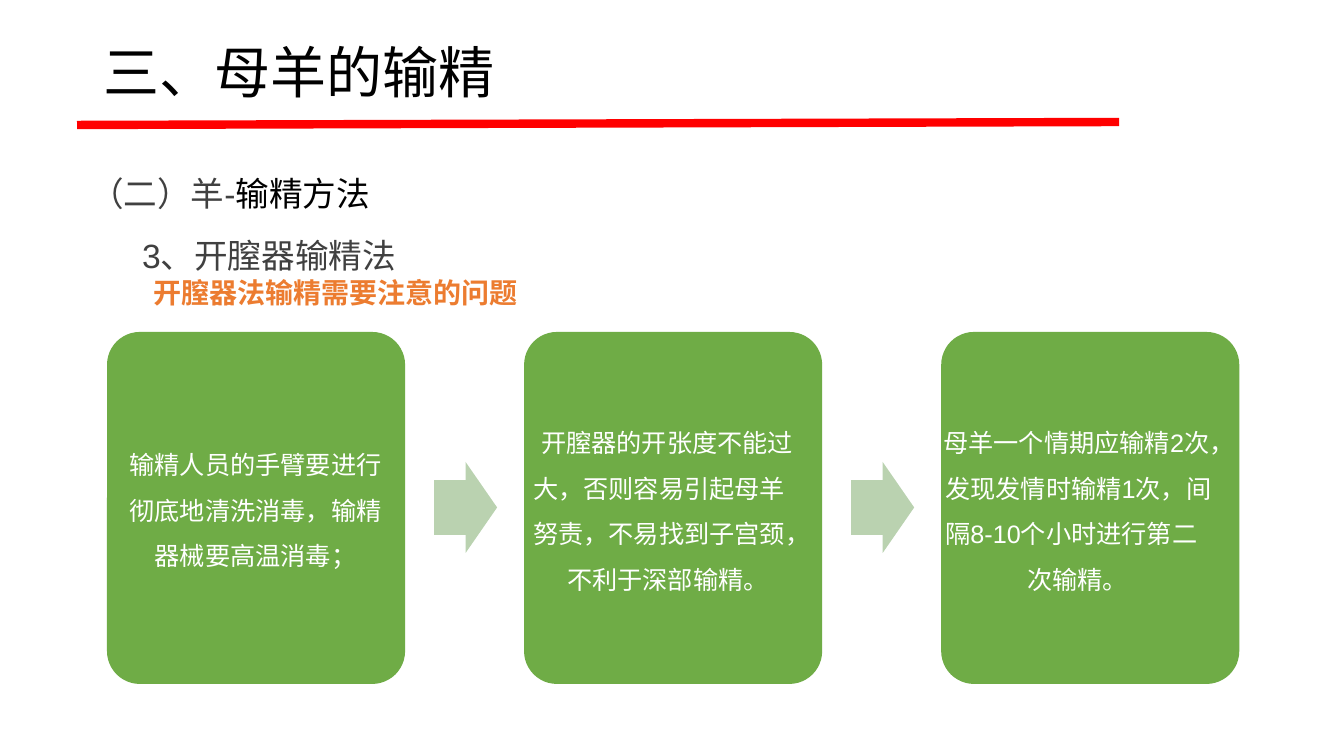
import itertools

import pptx
import pptx.dml.color
import pptx.enum.shapes
import pptx.enum.text
import pptx.oxml.ns
import pptx.util
from lxml import etree

RGBColor = pptx.dml.color.RGBColor
SHAPE = pptx.enum.shapes.MSO_SHAPE
ALIGN = pptx.enum.text.PP_ALIGN
ANCHOR = pptx.enum.text.MSO_ANCHOR

BLACK = RGBColor(0x00, 0x00, 0x00)
GREY = RGBColor(0x40, 0x40, 0x40)
WHITE = RGBColor(0xFF, 0xFF, 0xFF)
RED = RGBColor(0xFF, 0x00, 0x00)
ORANGE = RGBColor(0xEC, 0x7C, 0x30)
GREEN = RGBColor(0x6F, 0xAC, 0x46)
PALE_GREEN = RGBColor(0xBA, 0xD2, 0xB0)

CHINESE_FONT = "Noto Sans CJK SC"
LATIN_FONT = "Arial"

CARD_LEFT, CARD_TOP, CARD_WIDTH, CARD_HEIGHT = 107, 332, 298, 352
CARD_STEP = 417
ARROW_OFFSET, ARROW_TOP, ARROW_WIDTH, ARROW_HEIGHT = 327, 462, 63, 91


def px(count):
    return pptx.util.Emu(count * 9071)


def add_text(paragraph, text, size, color, bold=False, align=None, line=None,
             before=0, margin=0, indent=0):
    """Append text to a paragraph; a newline in it becomes a line break."""
    props = paragraph._p.get_or_add_pPr()
    props.set("marL", str(px(margin)))
    props.set("indent", str(px(indent)))
    paragraph.alignment = align
    paragraph.line_spacing = line
    paragraph.space_before = pptx.util.Pt(before)
    for number, row in enumerate(text.split("\n")):
        if number:
            paragraph.add_line_break()
        for latin, letters in itertools.groupby(row, key=str.isascii):
            run = paragraph.add_run()
            run.text = "".join(letters)
            run.font.name = LATIN_FONT if latin else CHINESE_FONT
            run.font.size = pptx.util.Pt(size)
            run.font.bold = bold
            run.font.color.rgb = color
            east_asian = etree.SubElement(run._r.rPr, pptx.oxml.ns.qn("a:ea"))
            east_asian.set("typeface", CHINESE_FONT)


def add_box(slide, left, top, width, height):
    frame = slide.shapes.add_textbox(px(left), px(top), px(width), px(height)).text_frame
    frame.word_wrap = True
    frame.margin_left = frame.margin_right = frame.margin_bottom = 0
    frame.margin_top = px(2)
    return frame


def add_block(slide, kind, left, top, width, height, color, *adjustments):
    block = slide.shapes.add_shape(kind, px(left), px(top), px(width), px(height))
    block.shadow.inherit = False
    block.fill.solid()
    block.fill.fore_color.rgb = color
    block.line.fill.background()
    for number, value in enumerate(adjustments):
        block.adjustments[number] = value


def add_rule(slide, x1, y1, x2, y2):
    rule = slide.shapes.add_connector(
        pptx.enum.shapes.MSO_CONNECTOR.STRAIGHT, px(x1), px(y1), px(x2), px(y2))
    rule.line.color.rgb = RED
    rule.line.width = pptx.util.Pt(6)
    etree.SubElement(rule._element.spPr, pptx.oxml.ns.qn("a:effectLst"))


def add_title(slide, text):
    title = slide.shapes.title
    title.left, title.top, title.width, title.height = px(93), px(2), px(1159), px(146)
    title.text_frame.vertical_anchor = ANCHOR.MIDDLE
    add_text(title.text_frame.paragraphs[0], text, 40, BLACK, align=ALIGN.LEFT, line=0.9)


def add_headings(slide):
    headings = add_box(slide, 74, 151, 1050, 126)
    method = headings.paragraphs[0]
    add_text(method, "（二）羊-", 24, GREY, line=1.5, margin=16)
    add_text(method, "输精方法", 24, BLACK, line=1.5, margin=16)
    add_text(headings.add_paragraph(), "3、开膣器输精法", 24, GREY,
             line=1.5, before=1, margin=68)
    topic = add_box(slide, 152, 274, 390, 37)
    add_text(topic.paragraphs[0], "开膣器法输精需要注意的问题", 20, ORANGE, bold=True, margin=1)


def add_note(slide, left, top, width, height, text, last="", last_margin=0, **layout):
    note = add_box(slide, left, top, width, height)
    add_text(note.paragraphs[0], text, 18, WHITE, line=1.51, **layout)
    if last:
        add_text(note.add_paragraph(), last, 18, WHITE, before=10.8, margin=last_margin)


def main():
    deck = pptx.Presentation()
    deck.slide_width = pptx.util.Inches(13.33)
    deck.slide_height = pptx.util.Inches(7.5)
    slide = deck.slides.add_slide(deck.slide_layouts[5])

    # Title and headings
    add_rule(slide, 77, 125, 1119, 122)
    add_title(slide, "三、母羊的输精")
    add_headings(slide)

    # Three cards joined by block arrows
    for step in range(3):
        left = CARD_LEFT + step * CARD_STEP
        add_block(slide, SHAPE.ROUNDED_RECTANGLE, left, CARD_TOP,
                  CARD_WIDTH, CARD_HEIGHT, GREEN, 0.11)
        if step < 2:
            add_block(slide, SHAPE.RIGHT_ARROW, left + ARROW_OFFSET, ARROW_TOP,
                      ARROW_WIDTH, ARROW_HEIGHT, PALE_GREEN, 0.6, 0.5)

    # Notes on the cards
    add_note(slide, 128, 432, 255, 140,
             "输精人员的手臂要进行\n彻底地清洗消毒，输精\n器械要高温消毒；", align=ALIGN.CENTER)
    add_note(slide, 532, 410, 290, 185,
             "开膣器的开张度不能过\n大，否则容易引起母羊\n努责，不易找到子宫颈，",
             "不利于深部输精。", 35, margin=1, indent=8)
    add_note(slide, 942, 410, 310, 185,
             "母羊一个情期应输精2次，\n发现发情时输精1次，间\n隔8-10个小时进行第二",
             "次输精。", 85, margin=3, indent=-2)

    deck.save("out.pptx")


if __name__ == "__main__":
    main()
